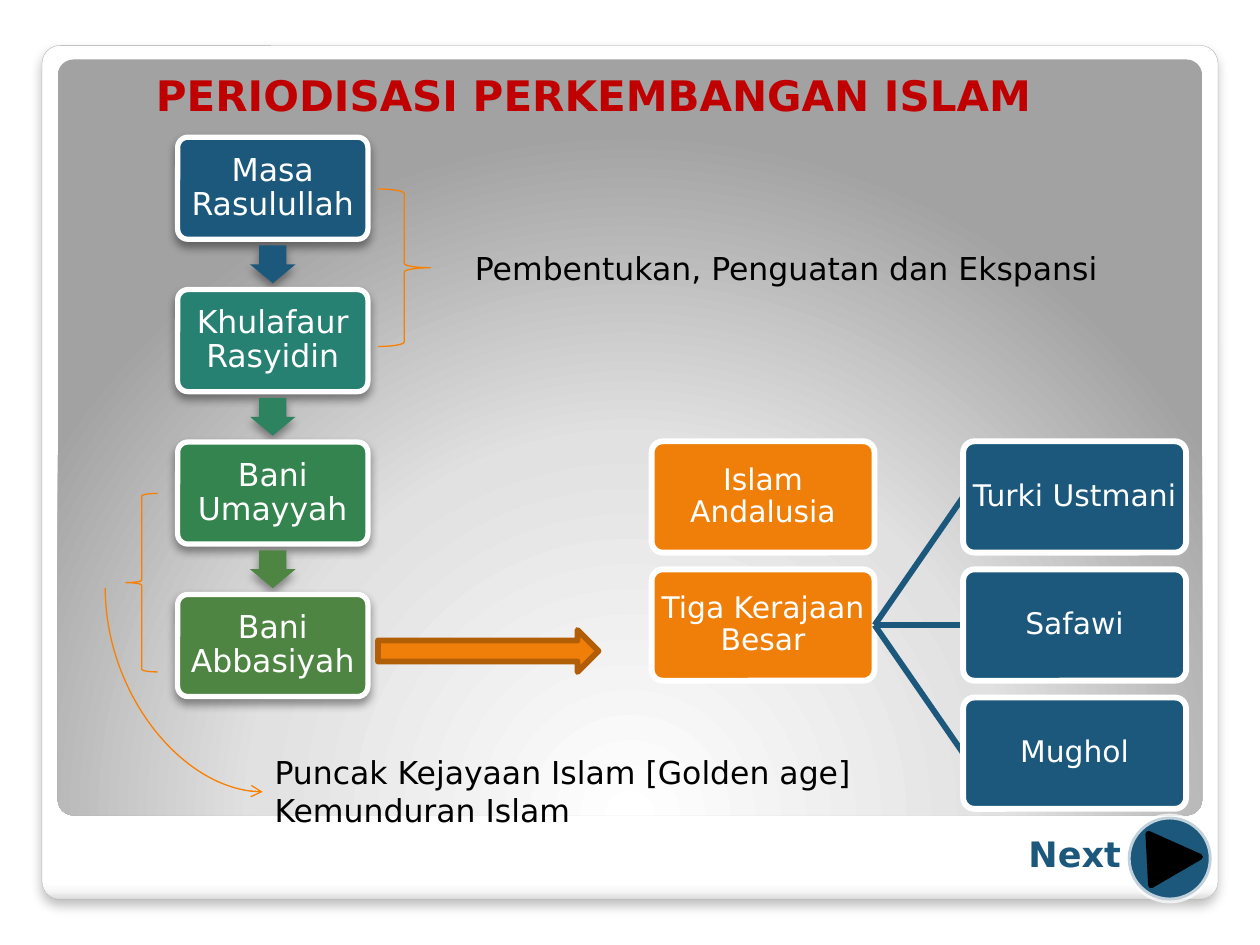
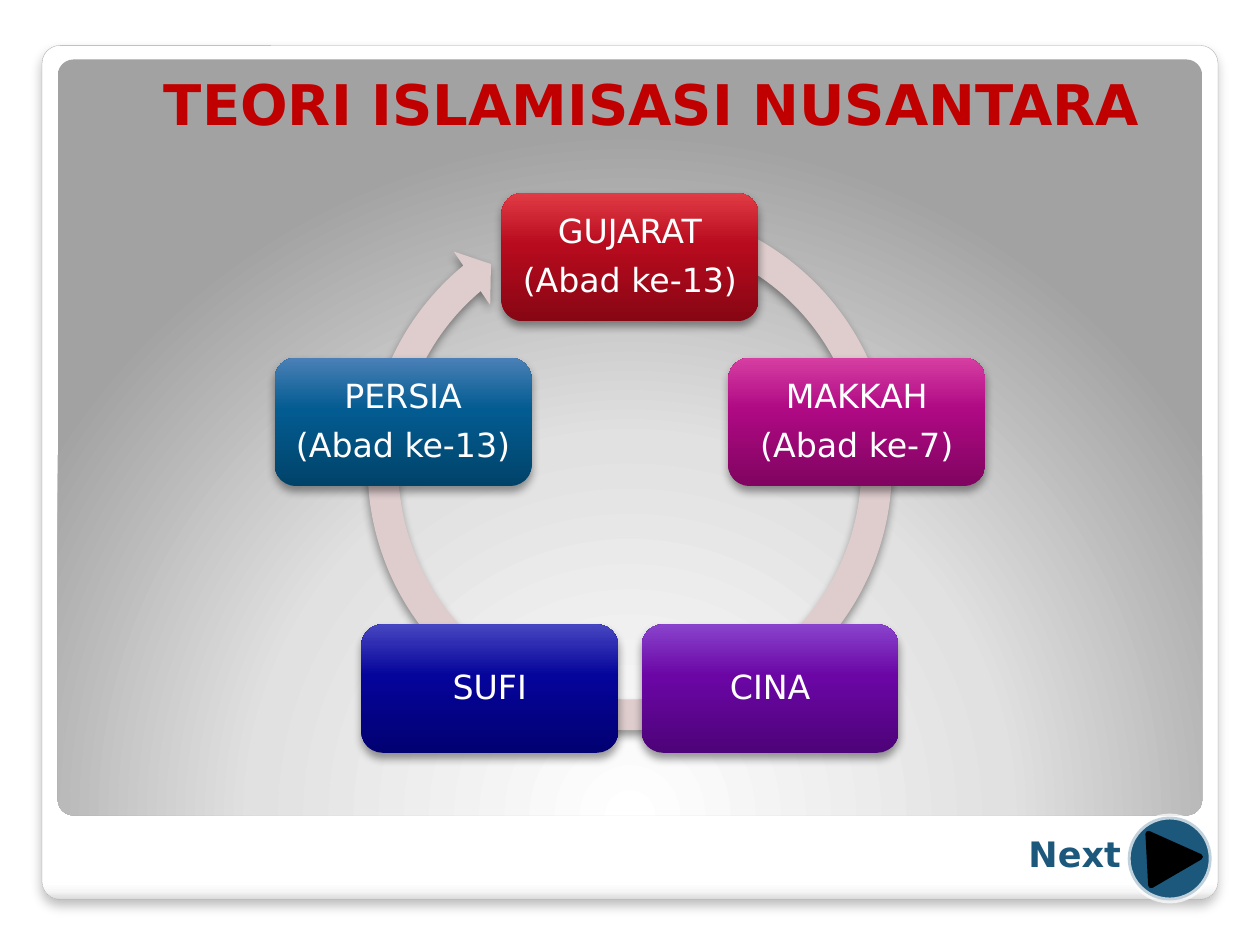
"""Build two slides on the periods of Islam and the theories of its spread in Nusantara."""
from dataclasses import dataclass
from math import cos, radians, sin

from lxml import etree
from pptx import Presentation
from pptx.dml.color import RGBColor
from pptx.enum.shapes import MSO_CONNECTOR, MSO_SHAPE
from pptx.enum.text import MSO_ANCHOR, PP_ALIGN
from pptx.oxml import parse_xml
from pptx.oxml.ns import nsdecls, qn
from pptx.util import Pt

ROUND, ARROW, RING = MSO_SHAPE.ROUNDED_RECTANGLE, MSO_SHAPE.RIGHT_ARROW, MSO_SHAPE.CIRCULAR_ARROW
OVAL, WEDGE = MSO_SHAPE.OVAL, MSO_SHAPE.ISOSCELES_TRIANGLE
LEFT_BRACE, RIGHT_BRACE = MSO_SHAPE.LEFT_BRACE, MSO_SHAPE.RIGHT_BRACE
STRAIGHT, CURVE = MSO_CONNECTOR.STRAIGHT, MSO_CONNECTOR.CURVE
CENTER, START = PP_ALIGN.CENTER, PP_ALIGN.LEFT
MIDDLE, TOP = MSO_ANCHOR.MIDDLE, MSO_ANCHOR.TOP


@dataclass(frozen=True)
class Theme:
    """Colours, font and type sizes."""
    font: str = "DejaVu Sans"
    white: str = "FFFFFF"
    black: str = "000000"
    red: str = "C00000"
    blue: str = "1B587C"
    orange: str = "F07F09"
    rust: str = "B25E07"
    brace: str = "F97F00"
    edge: str = "A4A4A4"
    rose: str = "DFCDCE"
    next: int = 20
    note: int = 18
    leaf: int = 17
    ring: int = 19
    thick: float = 3.35
    thin: float = 0.75


T = Theme()
FRAME = [(0, "FFFFFF"), (98, "FFFFFF"), (99, "F7F7F7"), (100, "DADADA")]
PANEL = [(0, "FFFFFF"), (55, "E1E1E1"), (100, "A2A2A2")]
TITLES = [
    ("PERIODISASI PERKEMBANGAN ISLAM", 24, (72, 36, 534.2, 36)),
    ("TEORI ISLAMISASI NUSANTARA", 32, (72, 36, 601.2, 46)),
]
ERAS = [
    ("Masa Rasulullah", "1B587C", "1B587C"),
    ("Khulafaur Rasyidin", "268173", "2D8260"),
    ("Bani Umayyah", "33844E", "4E8542"),
    ("Bani Abbasiyah", "4E8542", None),
]
ROOTS = ["Islam Andalusia", "Tiga Kerajaan Besar"]
REALMS = ["Turki Ustmani", "Safawi", "Mughol"]
NOTES = [
    (["Pembentukan, Penguatan dan Ekspansi"], (264.3, 139, 374.4, 29)),
    (["Puncak Kejayaan Islam [Golden age]", "Kemunduran Islam"], (149.8, 427, 352.8, 51)),
]
BRACES = [(RIGHT_BRACE, (216, 108, 30, 90)), (LEFT_BRACE, (72, 282, 18, 102))]
THEORIES = [
    (["GUJARAT", "(Abad ke-13)"], ("870614", "B80B1E", "E13C45")),
    (["MAKKAH", "(Abad ke-7)"], ("800460", "AF0984", "D63FA2")),
    (["CINA"], ("4D0379", "6B06A5", "8943CC")),
    (["SUFI"], ("020172", "05049B", "4646C1")),
    (["PERSIA", "(Abad ke-13)"], ("00436A", "035C91", "4A80B7")),
]


def rgb(code):
    """Turn a hex code into a colour."""
    return RGBColor.from_string(code)


def draw(slide, kind, box, fill=None, line=None, width=T.thick, adj=(), turn=0):
    """Add a flat preset shape; box is left, top, width, height."""
    shape = slide.shapes.add_shape(kind, *map(Pt, box))
    shape.shadow.inherit = False
    shape.rotation = turn
    for i, value in enumerate(adj):
        shape.adjustments[i] = value
    if fill:
        shape.fill.solid()
        shape.fill.fore_color.rgb = rgb(fill)
    else:
        shape.fill.background()
    if line:
        shape.line.color.rgb = rgb(line)
        shape.line.width = Pt(width)
    else:
        shape.line.fill.background()
    return shape


def blend(shape, stops, way):
    """Give a shape a gradient with the given stops and direction XML."""
    shape.fill.gradient()
    marks = "".join(f'<a:gs pos="{p * 1000}"><a:srgbClr val="{c}"/></a:gs>' for p, c in stops)
    props = shape.element.spPr
    props.replace(props.find(qn("a:gradFill")), parse_xml(
        f'<a:gradFill {nsdecls("a")} rotWithShape="1"><a:gsLst>{marks}</a:gsLst>{way}</a:gradFill>'))


def shade(shape, alpha=40, blur=5.2, drop=3):
    """Cast a soft black shadow straight down."""
    shape.element.spPr.find(qn("a:effectLst")).append(parse_xml(
        f'<a:outerShdw {nsdecls("a")} blurRad="{Pt(blur)}" dist="{Pt(drop)}" dir="5400000" '
        f'rotWithShape="0"><a:srgbClr val="{T.black}"><a:alpha val="{alpha * 1000}"/>'
        '</a:srgbClr></a:outerShdw>'))


def write(shape, lines, size, color, align=CENTER, bold=False, pitch=None, gap=0):
    """Fill a shape with one paragraph per line."""
    frame = shape.text_frame
    frame.text = "\n".join(lines)
    for i, para in enumerate(frame.paragraphs):
        para.alignment = align
        para.line_spacing = pitch
        if i < len(lines) - 1:
            para.space_after = Pt(gap)
        font = para.font
        font.name, font.size, font.bold = T.font, Pt(size), bold
        font.color.rgb = rgb(color)
    return frame


def label(shape, lines, size, inset, gap=0):
    """Write centred white text inside a box."""
    frame = write(shape, lines, size, T.white, pitch=0.9, gap=gap)
    frame.word_wrap, frame.vertical_anchor = True, MIDDLE
    frame.margin_left = frame.margin_right = Pt(inset)
    frame.margin_top = frame.margin_bottom = Pt(inset)


def note(slide, lines, box, size, color, align=START, bold=False):
    """Add a text box that does not wrap."""
    area = slide.shapes.add_textbox(*map(Pt, box))
    write(area, lines, size, color, align, bold).word_wrap = False


def join(slide, kind, ends, color, width):
    """Add a connector without shadow."""
    link = slide.shapes.add_connector(kind, *map(Pt, ends))
    link.line.color.rgb = rgb(color)
    link.line.width = Pt(width)
    etree.SubElement(link.element.spPr, qn("a:effectLst"))
    return link


def dress(slide, layout):
    """Draw the frame and panel and move them to the layout."""
    for spare in list(layout.placeholders)[1:]:
        spare.element.getparent().remove(spare.element)
    frame = draw(slide, ROUND, (24, 26, 672, 488), T.white, T.edge, 0.16, [0.021])
    blend(frame, FRAME, '<a:lin ang="5400000" scaled="0"/>')
    shade(frame, 25, 6, 4)
    panel = draw(slide, ROUND, (33, 34, 654, 432), T.white, adj=[0.021])
    blend(panel, PANEL, '<a:path path="circle"><a:fillToRect l="50000" t="175000" '
                        'r="50000" b="-75000"/></a:path>')
    for part in (frame, panel):
        layout.shapes.element.append(part.element)


def start(slide, text, size, box):
    """Set the title and the Next button."""
    title = slide.shapes.title
    title.left, title.top, title.width, title.height = map(Pt, box)
    frame = write(title, [text], size, T.red, bold=True)
    frame.word_wrap, frame.vertical_anchor = False, TOP
    disc = draw(slide, OVAL, (644.4, 466.6, 48, 48), T.blue, T.white)
    tint = disc.element.spPr.find(qn("a:ln")).find(".//" + qn("a:srgbClr"))
    etree.SubElement(tint, qn("a:alpha")).set("val", "72000")
    draw(slide, WEDGE, (656.6, 476, 29.5, 28.8), T.black, T.black, turn=87)
    note(slide, ["Next"], (580.3, 472.3, 67.7, 31.7), T.next, T.blue, CENTER, True)


def chain(slide):
    """Stack the eras with arrows between them."""
    left, top, wide, high, step = 101.5, 78.4, 108.7, 58.3, 87.1
    for i, (name, fill, tip) in enumerate(ERAS):
        y = top + i * step
        box = draw(slide, ROUND, (left, y, wide, high), fill, T.white, 3, [0.1])
        shade(box)
        label(box, [name], T.note, 5)
        if tip:
            mid = y + (high + step) / 2
            shade(draw(slide, ARROW, (left + wide / 2 - 10.8, mid - 13, 21.6, 26),
                       tip, adj=[0.6, 0.5], turn=90))


def tree(slide):
    """Place both branches and link the three realms."""
    top, wide, high, step = 252.2, 127.4, 63.6, 73.2

    def column(left, names, fill):
        """Stack one column of boxes."""
        boxes = []
        for i, name in enumerate(names):
            box = draw(slide, ROUND, (left, top + i * step, wide, high), fill, T.white, adj=[0.1])
            label(box, [name], T.leaf, 0.7)
            boxes.append(box)
        return boxes

    root = column(372.4, ROOTS, T.orange)[-1]
    for realm in column(550.4, REALMS, T.blue):
        link = join(slide, STRAIGHT, (0, 0, 0, 0), T.blue, T.thick)
        link.begin_connect(root, 3)
        link.end_connect(realm, 1)
        slide.shapes.element.append(realm.element)


def periods(slide):
    """Fill the slide on periods."""
    chain(slide)
    tree(slide)
    draw(slide, ARROW, (216, 360, 126, 24), T.orange, T.rust)
    for lines, box in NOTES:
        note(slide, lines, box, T.note, T.black)
    for kind, box in BRACES:
        draw(slide, kind, box, line=T.brace, width=T.thin)
    bend = join(slide, CURVE, (163.4, 349.2, 46.8, 439.2), T.brace, T.thin)
    props = bend.element.spPr
    props.find(qn("a:xfrm")).set("rot", "16200000")
    props.find(qn("a:prstGeom")).set("prst", "curvedConnector2")
    etree.SubElement(props.find(qn("a:ln")), qn("a:tailEnd")).set("type", "arrow")


def spread(slide):
    """Set the theories around a ring."""
    shade(draw(slide, RING, (200.4, 108, 319, 319), T.rose,
               adj=[0.055, 3.307, 138.152, 173.621, 0.058]))
    wide, high, reach = 146.9, 73.4, 136.3
    for i, (lines, tones) in enumerate(THEORIES):
        turn = radians(i * 360 / len(THEORIES))
        x, y = 360 + reach * sin(turn), 283.2 - reach * cos(turn)
        box = draw(slide, ROUND, (x - wide / 2, y - high / 2, wide, high), tones[0])
        blend(box, zip((0, 60, 100), tones), '<a:lin ang="16200000" scaled="0"/>')
        shade(box)
        label(box, lines, T.ring, 6, 7.5)


def main():
    """Build and save the deck."""
    deck = Presentation()
    deck.slide_width, deck.slide_height = Pt(720), Pt(540)
    layout = deck.slide_layouts[5]
    for i, (title, fill) in enumerate(zip(TITLES, (periods, spread))):
        slide = deck.slides.add_slide(layout)
        if i == 0:
            dress(slide, layout)
        start(slide, *title)
        fill(slide)
    deck.save("out.pptx")


if __name__ == "__main__":
    main()
